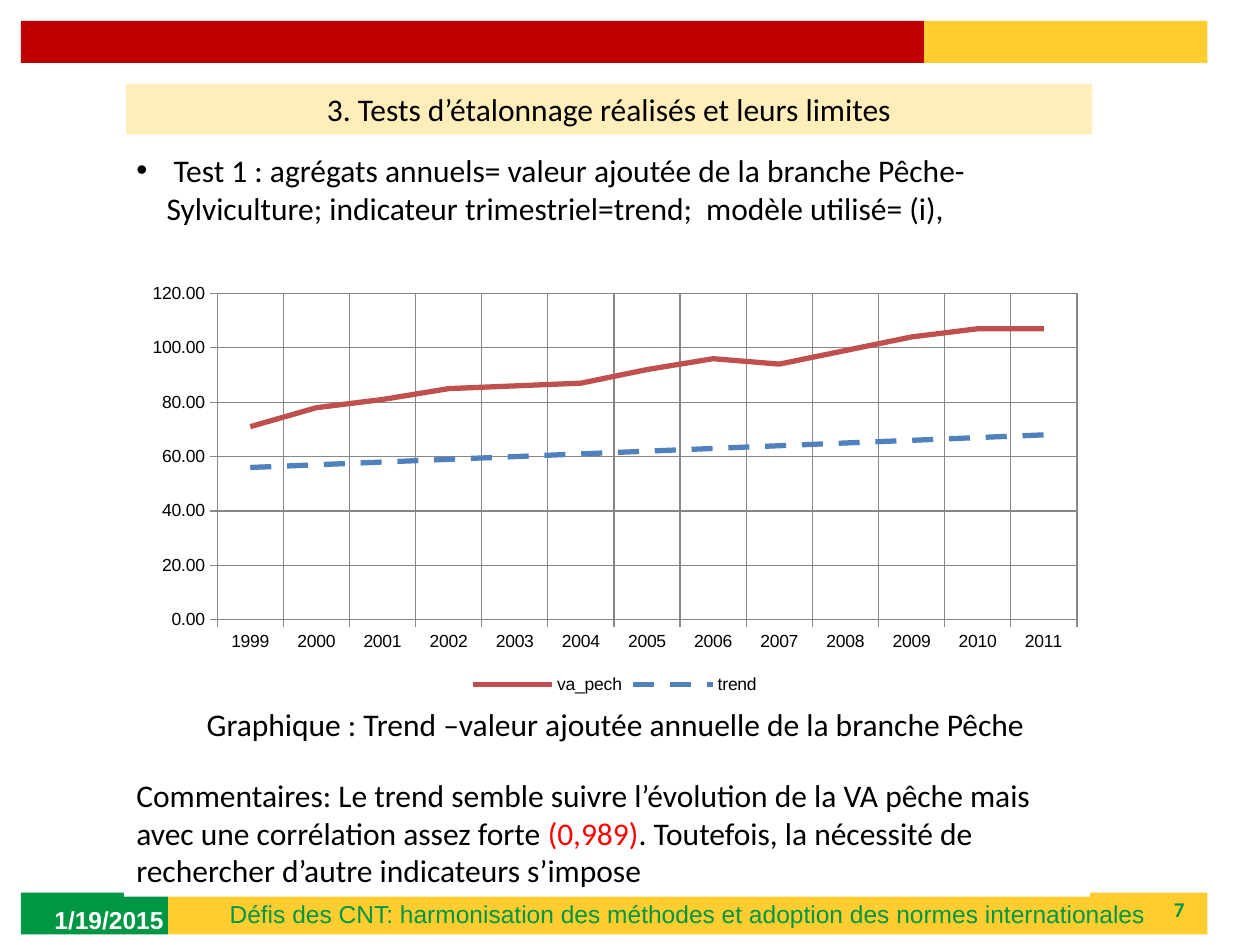
from dataclasses import dataclass

import pptx
import pptx.chart.data
import pptx.dml.color
import pptx.enum.chart
import pptx.enum.dml
import pptx.enum.shapes
import pptx.enum.text
import pptx.oxml
import pptx.oxml.ns
import pptx.util

Align = pptx.enum.text.PP_ALIGN
Anchor = pptx.enum.text.MSO_ANCHOR
Dash = pptx.enum.dml.MSO_LINE


@dataclass(frozen=True)
class Theme:
    body_font: str = "Calibri"
    footer_font: str = "Arial"
    body_size: int = 18
    footer_size: int = 14
    number_size: int = 12
    chart_size: int = 10
    text: str = "000000"
    white: str = "FFFFFF"
    green: str = "009644"
    yellow: str = "FFCD2F"
    dark_red: str = "C00000"
    cream: str = "FFEEB9"
    highlight: str = "FF0000"
    grid: str = "878787"
    value_line: str = "C0504D"
    trend_line: str = "4F81BD"


@dataclass(frozen=True)
class Area:
    column: float
    row: float
    columns: float
    rows: float

    def lengths(self) -> list[int]:
        return [round(cells * CELL) for cells in (self.column, self.row, self.columns, self.rows)]


@dataclass(frozen=True)
class Curve:
    name: str
    values: tuple[int, ...]
    color: str
    dash: Dash


THEME = Theme()
CELL = pptx.util.Inches(10) / 120
BULLET_INDENT = pptx.util.Inches(0.24)

YEARS = [str(year) for year in range(1999, 2012)]
CURVES = [
    Curve("va_pech", (71, 78, 81, 85, 86, 87, 92, 96, 94, 99, 104, 107, 107),
          THEME.value_line, Dash.SOLID),
    Curve("trend", tuple(range(56, 69)), THEME.trend_line, Dash.DASH),
]


def rgb(color: str) -> pptx.dml.color.RGBColor:
    return pptx.dml.color.RGBColor.from_string(color)


def set_font(font, size: int, color: str, name: str, bold: bool = False) -> None:
    font.size = pptx.util.Pt(size)
    font.color.rgb = rgb(color)
    font.name = name
    font.bold = bold


def add_band(slide, area: Area, fill: str):
    band = slide.shapes.add_shape(pptx.enum.shapes.MSO_SHAPE.RECTANGLE, *area.lengths())
    band.shadow.inherit = False
    band.fill.solid()
    band.fill.fore_color.rgb = rgb(fill)
    band.line.fill.background()
    return band


def add_text_area(slide, area: Area):
    return slide.shapes.add_textbox(*area.lengths())


def write(holder, *parts: str | tuple[str, str], size: int = THEME.body_size,
          color: str = THEME.text, font: str = THEME.body_font, bold: bool = False,
          align: Align = Align.LEFT, anchor: Anchor = Anchor.TOP, bullet: bool = False) -> None:
    frame = holder.text_frame
    frame.word_wrap = True
    frame.vertical_anchor = anchor
    paragraph = frame.paragraphs[0]
    paragraph.alignment = align
    if bullet:
        properties = paragraph._p.get_or_add_pPr()
        properties.set("marL", str(BULLET_INDENT))
        properties.set("indent", str(-BULLET_INDENT))
        namespace = pptx.oxml.ns.nsdecls("a")
        properties.append(pptx.oxml.parse_xml(f'<a:buFont {namespace} typeface="Arial"/>'))
        properties.append(pptx.oxml.parse_xml(f'<a:buChar {namespace} char="•"/>'))
    for part in parts:
        words, part_color = (part, color) if isinstance(part, str) else part
        run = paragraph.add_run()
        run.text = words
        set_font(run.font, size, part_color, font, bold)


def style_axis(axis) -> None:
    axis.has_major_gridlines = True
    axis.major_tick_mark = pptx.enum.chart.XL_TICK_MARK.CROSS
    for line in (axis.format.line, axis.major_gridlines.format.line):
        line.color.rgb = rgb(THEME.grid)
        line.width = pptx.util.Pt(0.75)


def add_trend_chart(slide, area: Area, curves: list[Curve]) -> None:
    data = pptx.chart.data.CategoryChartData(number_format="0.00")
    data.categories = YEARS
    for curve in curves:
        data.add_series(curve.name, curve.values)
    chart = slide.shapes.add_chart(
        pptx.enum.chart.XL_CHART_TYPE.LINE, *area.lengths(), data).chart
    set_font(chart.font, THEME.chart_size, THEME.text, THEME.footer_font)
    chart.has_title = False
    chart.has_legend = True
    chart.legend.position = pptx.enum.chart.XL_LEGEND_POSITION.BOTTOM
    chart.legend.include_in_layout = False
    style_axis(chart.category_axis)
    style_axis(chart.value_axis)
    chart.value_axis.minimum_scale = 0
    chart.value_axis.maximum_scale = 120
    chart.value_axis.major_unit = 20
    chart.value_axis.tick_labels.number_format = "0.00"
    chart.value_axis.tick_labels.number_format_is_linked = False
    plot = chart.plots[0]
    plot.vary_by_categories = False
    for series, curve in zip(plot.series, curves):
        series.smooth = False
        series.marker.style = pptx.enum.chart.XL_MARKER_STYLE.NONE
        series.format.line.color.rgb = rgb(curve.color)
        series.format.line.width = pptx.util.Pt(3)
        series.format.line.dash_style = curve.dash


def main() -> None:
    deck = pptx.Presentation()
    deck.slide_width = pptx.util.Inches(10)
    deck.slide_height = pptx.util.Inches(7.5)
    slide = deck.slides.add_slide(deck.slide_layouts[6])

    add_band(slide, Area(2, 85, 14, 4), THEME.green)
    footer = add_band(slide, Area(16, 85, 99, 4), THEME.yellow)
    write(footer, "Défis des CNT: harmonisation des méthodes et adoption des normes internationales",
          size=THEME.footer_size, color=THEME.green, font=THEME.footer_font,
          align=Align.CENTER, anchor=Anchor.MIDDLE)
    page_number = add_text_area(slide, Area(86, 85, 28, 3.2))
    write(page_number, "7", size=THEME.number_size, color=THEME.green, bold=True,
          align=Align.RIGHT, anchor=Anchor.MIDDLE)
    add_band(slide, Area(2, 2, 86, 4), THEME.dark_red)
    add_band(slide, Area(88, 2, 27, 4), THEME.yellow)
    date = add_text_area(slide, Area(4, 85.2, 28, 4.8))
    write(date, "1/19/2015", size=THEME.footer_size, color=THEME.white,
          font=THEME.footer_font, bold=True, anchor=Anchor.MIDDLE)

    title = add_band(slide, Area(12, 8, 92, 4.8), THEME.cream)
    write(title, "3. Tests d’étalonnage réalisés et leurs limites", align=Align.CENTER)
    test = add_band(slide, Area(11.8, 13.8, 92, 8.5), THEME.white)
    write(test, " Test 1 : agrégats annuels= valeur ajoutée de la branche Pêche-Sylviculture; "
          "indicateur trimestriel=trend;  modèle utilisé= (i),", bullet=True)
    comments = add_band(slide, Area(11.8, 73.3, 92, 12.1), THEME.white)
    write(comments, "Commentaires: Le trend semble suivre l’évolution de la VA pêche mais "
          "avec une corrélation assez forte ", ("(0,989)", THEME.highlight),
          ". Toutefois, la nécessité de rechercher d’autre indicateurs s’impose")
    add_trend_chart(slide, Area(12.7, 26.2, 91.7, 40.4), CURVES)
    caption = add_text_area(slide, Area(18.5, 66.6, 82.2, 4.8))
    write(caption, "Graphique : Trend –valeur ajoutée annuelle de la branche Pêche")

    deck.save("out.pptx")


if __name__ == "__main__":
    main()
